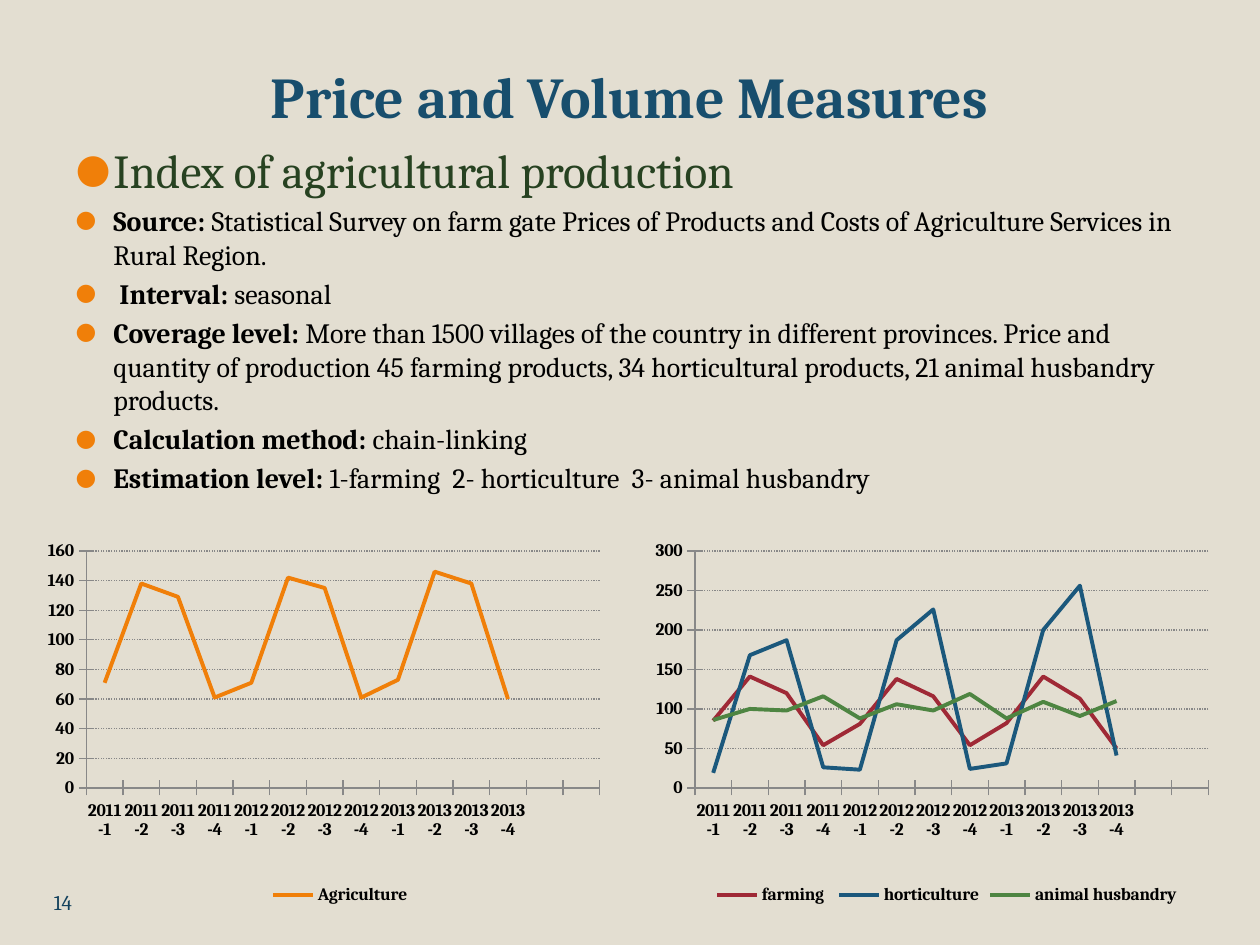
from lxml.etree import SubElement
from pptx import Presentation
from pptx.chart.data import CategoryChartData
from pptx.dml.color import RGBColor
from pptx.enum.chart import XL_CHART_TYPE, XL_LEGEND_POSITION, XL_TICK_MARK
from pptx.enum.dml import MSO_LINE
from pptx.enum.text import MSO_ANCHOR, MSO_AUTO_SIZE, PP_ALIGN
from pptx.oxml import parse_xml
from pptx.oxml.ns import nsdecls, qn
from pptx.util import Inches, Pt

FONT = "Cambria"
COLORS = {
    "background": "E3DED1", "title": "184E6D", "heading": "274221",
    "text": "000000", "bullet": "F07F09", "number": "14425D", "axis": "888888",
    "agriculture": "F07F09", "farming": "9F2936",
    "horticulture": "1B587C", "husbandry": "4E8542",
}


def style_font(font, size, color, bold=False):
    font.name, font.size, font.bold = FONT, Pt(size), bold
    font.color.rgb = RGBColor.from_string(COLORS[color])


def add_bullet(paragraph):
    properties = paragraph._p.get_or_add_pPr()
    properties.set("marL", str(Inches(0.3)))
    properties.set("indent", str(Inches(-0.3)))
    bullet_color = SubElement(properties, qn("a:buClr"))
    SubElement(bullet_color, qn("a:srgbClr"), val=COLORS["bullet"])
    SubElement(properties, qn("a:buSzPct"), val="85000")
    SubElement(properties, qn("a:buFont"), typeface=FONT)
    SubElement(properties, qn("a:buChar"), char="●")


prs = Presentation()
prs.slide_width, prs.slide_height = Inches(10), Inches(7.5)
slide = prs.slides.add_slide(prs.slide_layouts[1])
slide.background.fill.solid()
slide.background.fill.fore_color.rgb = RGBColor.from_string(COLORS["background"])

# Title
title = slide.shapes.title
title.left, title.top, title.width, title.height = map(Inches, (0.33, 0.25, 9.33, 0.83))
title.text_frame.text = "Price and Volume Measures"
title.text_frame.vertical_anchor = MSO_ANCHOR.BOTTOM
title.text_frame.auto_size = MSO_AUTO_SIZE.NONE
title.text_frame.paragraphs[0].alignment = PP_ALIGN.CENTER
style_font(title.text_frame.paragraphs[0].font, 33, "title", True)

# Index description
details = [
    ("Source: ", "Statistical Survey on farm gate Prices of Products and Costs of "
                 "Agriculture Services in Rural Region."),
    (" Interval: ", "seasonal"),
    ("Coverage level: ", "More than 1500 villages of the country in different provinces. "
                         "Price and quantity of production 45 farming products, "
                         "34 horticultural products, 21 animal husbandry products."),
    ("Calculation method: ", "chain-linking"),
    ("Estimation level: ", "1-farming  2- horticulture  3- animal husbandry"),
]
description = slide.placeholders[1]
description.left, description.top, description.width, description.height = map(
    Inches, (0.5, 1.07, 9, 6.19))
description.text_frame.auto_size = MSO_AUTO_SIZE.NONE
heading = description.text_frame.paragraphs[0]
heading.text = "Index of agricultural production"
add_bullet(heading)
style_font(heading.font, 27, "heading")
for label, detail in details:
    item = description.text_frame.add_paragraph()
    add_bullet(item)
    style_font(item.font, 16, "text")
    label_run = item.add_run()
    label_run.text = label
    label_run.font.bold = True
    item.add_run().text = detail

# Page number
page_number = slide.shapes.add_textbox(Inches(0.33), Inches(7.01), Inches(3.92), Inches(0.4))
page_number.text_frame.word_wrap = True
page_number.text_frame.text = "14"
style_font(page_number.text_frame.paragraphs[0].font, 12, "number")

# Seasonal charts: the last two categories stay empty
seasons = [f"{year}-{season}" for year in (2011, 2012, 2013) for season in range(1, 5)]
indices = [
    (5.03, 300, 50, [
        ("farming ", "farming", [85, 141, 120, 54, 81, 138, 116, 54, 82, 141, 113, 50]),
        ("horticulture", "horticulture",
         [19, 168, 187, 26, 23, 187, 226, 24, 31, 200, 256, 41]),
        ("animal husbandry ", "husbandry",
         [86, 100, 98, 116, 88, 106, 98, 119, 88, 109, 91, 110]),
    ]),
    (0.2, 160, 20, [
        ("Agriculture", "agriculture",
         [71, 138, 129, 61, 71, 142, 135, 61, 73, 146, 138, 60]),
    ]),
]
plot_box = {"x": 0.097, "y": 0.051, "w": 0.815, "h": 0.627}
for left, maximum, step, groups in indices:
    data = CategoryChartData()
    data.categories = seasons + ["", ""]
    for name, _, values in groups:
        data.add_series(name, values + [None, None])
    chart = slide.shapes.add_chart(XL_CHART_TYPE.LINE, Inches(left), Inches(4.22),
                                   Inches(5), Inches(3), data).chart
    style_font(chart.font, 10, "text", True)
    chart.has_title = False
    chart.has_legend = True
    chart.legend.position = XL_LEGEND_POSITION.BOTTOM
    chart.legend.include_in_layout = False
    chart.plots[0].vary_by_categories = False

    for series, (_, color, _) in zip(chart.plots[0].series, groups):
        series.smooth = False
        series.format.line.width = Pt(2.25)
        series.format.line.color.rgb = RGBColor.from_string(COLORS[color])

    values_axis = chart.value_axis
    values_axis.minimum_scale, values_axis.maximum_scale = 0, maximum
    values_axis.major_unit = step
    values_axis.has_major_gridlines = True
    gridline = values_axis.major_gridlines.format.line
    gridline.dash_style = MSO_LINE.ROUND_DOT
    for axis in (chart.category_axis, values_axis):
        axis.major_tick_mark = XL_TICK_MARK.CROSS
    for line in (gridline, chart.category_axis.format.line, values_axis.format.line):
        line.width = Pt(0.75)
        line.color.rgb = RGBColor.from_string(COLORS["axis"])

    # Fixed inner plot area
    plot_area = chart._chartSpace.chart.plotArea
    for layout in plot_area.findall(qn("c:layout")):
        plot_area.remove(layout)
    modes = "".join(f'<c:{side}Mode val="edge"/>' for side in "xy")
    sizes = "".join(f'<c:{side} val="{size}"/>' for side, size in plot_box.items())
    plot_area.insert(0, parse_xml(
        f'<c:layout {nsdecls("c")}><c:manualLayout><c:layoutTarget val="inner"/>'
        f'{modes}{sizes}</c:manualLayout></c:layout>'))

prs.save("out.pptx")
